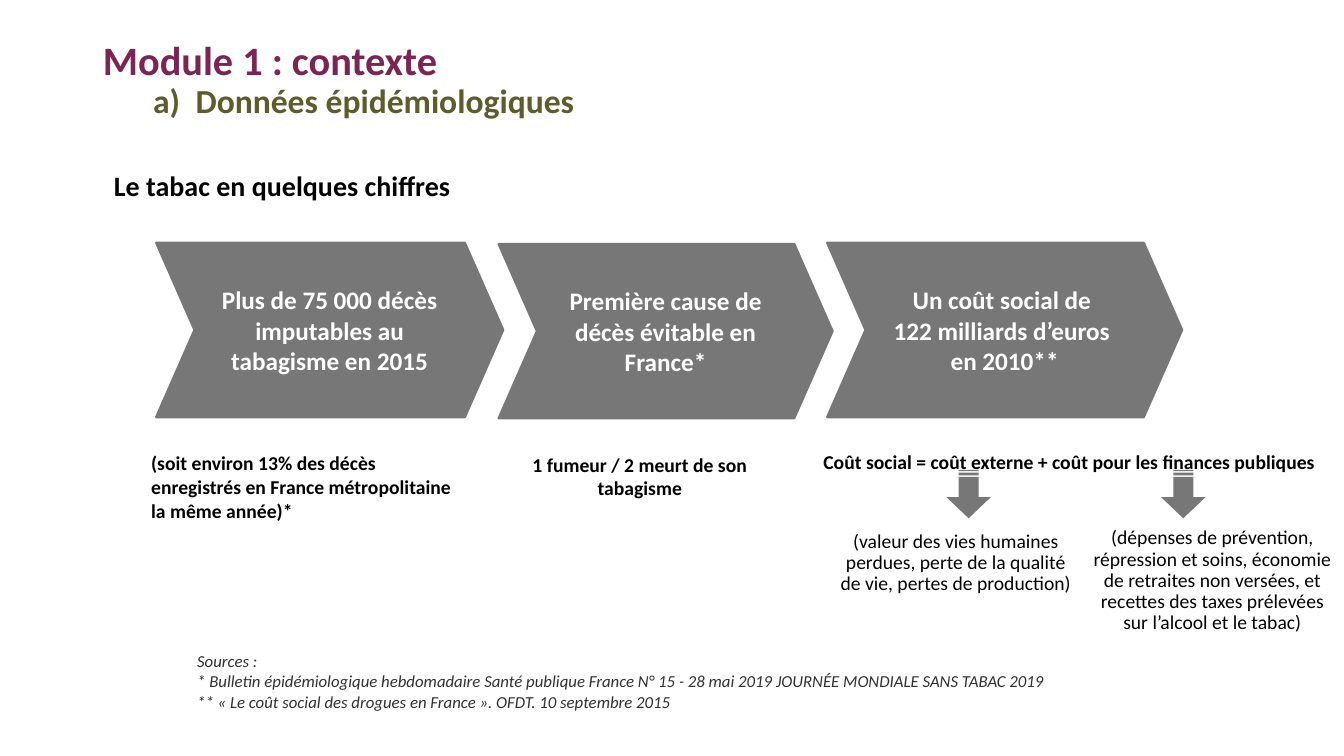
from lxml import etree
from pptx import Presentation
from pptx.dml.color import RGBColor
from pptx.enum.shapes import MSO_SHAPE
from pptx.enum.text import MSO_ANCHOR, MSO_AUTO_SIZE, PP_ALIGN
from pptx.oxml.ns import qn
from pptx.util import Cm, Pt

CHEVRON = MSO_SHAPE.CHEVRON
STRIPED_ARROW = MSO_SHAPE.STRIPED_RIGHT_ARROW
LEFT, CENTER = PP_ALIGN.LEFT, PP_ALIGN.CENTER
TOP, MIDDLE = MSO_ANCHOR.TOP, MSO_ANCHOR.MIDDLE
NO_AUTOFIT = MSO_AUTO_SIZE.NONE

PLUM = RGBColor(0x7A, 0x25, 0x53)
OLIVE = RGBColor(0x5C, 0x5C, 0x2C)
GREY = RGBColor(0x76, 0x77, 0x76)
DARK = RGBColor(0x31, 0x31, 0x31)
BLACK = RGBColor(0, 0, 0)
WHITE = RGBColor(0xFF, 0xFF, 0xFF)

TITLE_ONLY = 5
FONT = "Calibri"


def write(shape, *paragraphs, size=14, color=BLACK, bold=False, italic=False,
          align=LEFT, anchor=TOP, line_spacing=None, before=None):
    """Fill a shape with paragraphs that share one format."""
    frame = shape.text_frame
    frame.word_wrap = True
    frame.auto_size = NO_AUTOFIT
    frame.vertical_anchor = anchor
    for index, words in enumerate(paragraphs):
        paragraph = frame.add_paragraph() if index else frame.paragraphs[0]
        paragraph.text = words
        paragraph.alignment = align
        paragraph.line_spacing = line_spacing
        paragraph.space_before = before
        for run in paragraph.runs:
            run.font.name = FONT
            run.font.size = Pt(size)
            run.font.bold = bold
            run.font.italic = italic
            run.font.color.rgb = color


def add_text(slide, box, *paragraphs, **text_format):
    label = slide.shapes.add_textbox(*map(Cm, box))
    write(label, *paragraphs, **text_format)
    return label


def add_grey_shape(slide, kind, box, *adjustments):
    shape = slide.shapes.add_shape(kind, *map(Cm, box))
    for index, value in enumerate(adjustments):
        shape.adjustments[index] = value
    shape.shadow.inherit = False
    shape.fill.solid()
    shape.fill.fore_color.rgb = GREY
    return shape


def add_key_figure(slide, box, words):
    chevron = add_grey_shape(slide, CHEVRON, box, 0.22)
    chevron.line.color.rgb = GREY
    chevron.line.width = Pt(1.75)
    write(chevron, words, size=18, color=WHITE, bold=True,
          align=CENTER, anchor=MIDDLE)


def add_down_arrow(slide, left):
    arrow = add_grey_shape(slide, STRIPED_ARROW, (left, 11.89, 1.22, 1.12),
                           0.451, 0.475)
    arrow.rotation = 90
    arrow.line.fill.background()


def number_with_letter(paragraph, margin, indent):
    properties = paragraph._p.get_or_add_pPr()
    properties.set("marL", str(Cm(margin)))
    properties.set("indent", str(Cm(indent)))
    etree.SubElement(properties, qn("a:buFont"), typeface="+mj-lt")
    etree.SubElement(properties, qn("a:buAutoNum"), type="alphaLcParenR")


def add_headings(slide):
    title = slide.shapes.title
    title.left, title.top, title.width, title.height = map(
        Cm, (2.34, 1.02, 29.21, 1.24))
    write(title, "Module 1 : contexte", size=28.8, color=PLUM, bold=True,
          anchor=MIDDLE, line_spacing=0.7)
    subtitle = add_text(slide, (2.62, 2.01, 29.21, 1.8),
                        "Données épidémiologiques", size=24, color=OLIVE,
                        bold=True, line_spacing=0.9)
    number_with_letter(subtitle.text_frame.paragraphs[0], 2.06, -1.07)
    add_text(slide, (2.62, 4.11, 29.36, 1.12),
             "Le tabac en quelques chiffres", size=20, bold=True)


def main():
    prs = Presentation()
    prs.slide_width, prs.slide_height = Cm(33.87), Cm(19.05)
    slide = prs.slides.add_slide(prs.slide_layouts[TITLE_ONLY])

    add_headings(slide)

    # Key figures
    add_key_figure(slide, (12.57, 6.15, 8.41, 4.39),
                   "Première cause de décès évitable en France*")
    add_key_figure(slide, (3.94, 6.12, 8.74, 4.39),
                   "Plus de 75 000 décès\nimputables au tabagisme en 2015")
    add_key_figure(slide, (20.85, 6.12, 8.94, 4.39),
                   "Un coût social de \n122 milliards d’euros \nen 2010**")

    # Explanation under each figure
    add_text(slide, (3.56, 11.25, 8.23, 2.06),
             "(soit environ 13% des décès enregistrés en France "
             "métropolitaine la même année)*", bold=True)
    add_text(slide, (12.29, 11.28, 7.67, 1.45),
             "1 fumeur / 2 meurt de son tabagisme", bold=True, align=CENTER)
    cost_spacing = {"line_spacing": 0.9, "before": Pt(10)}
    add_text(slide, (20.5, 11.28, 13.36, 1.17),
             "Coût social = coût externe + coût pour les finances publiques",
             bold=True, **cost_spacing)

    # The two parts of the social cost
    add_text(slide, (20.9, 13.26, 6.38, 3.3),
             "(valeur des vies humaines perdues, perte de la qualité de vie, "
             "pertes de production)", align=CENTER, **cost_spacing)
    add_text(slide, (27.28, 13.18, 6.55, 4.39),
             "(dépenses de prévention, répression et soins, économie de "
             "retraites non versées, et recettes des taxes prélevées sur "
             "l’alcool et le tabac)", align=CENTER, **cost_spacing)
    for left in (23.8, 29.21):
        add_down_arrow(slide, left)

    # Sources
    add_text(slide, (4.72, 16.28, 25.3, 1.8),
             "Sources :",
             "* Bulletin épidémiologique hebdomadaire Santé publique France "
             "N° 15 - 28 mai 2019 JOURNÉE MONDIALE SANS TABAC 2019",
             "** « Le coût social des drogues en France ». OFDT. "
             "10 septembre 2015",
             size=12, color=DARK, italic=True)

    prs.save("out.pptx")


if __name__ == "__main__":
    main()
